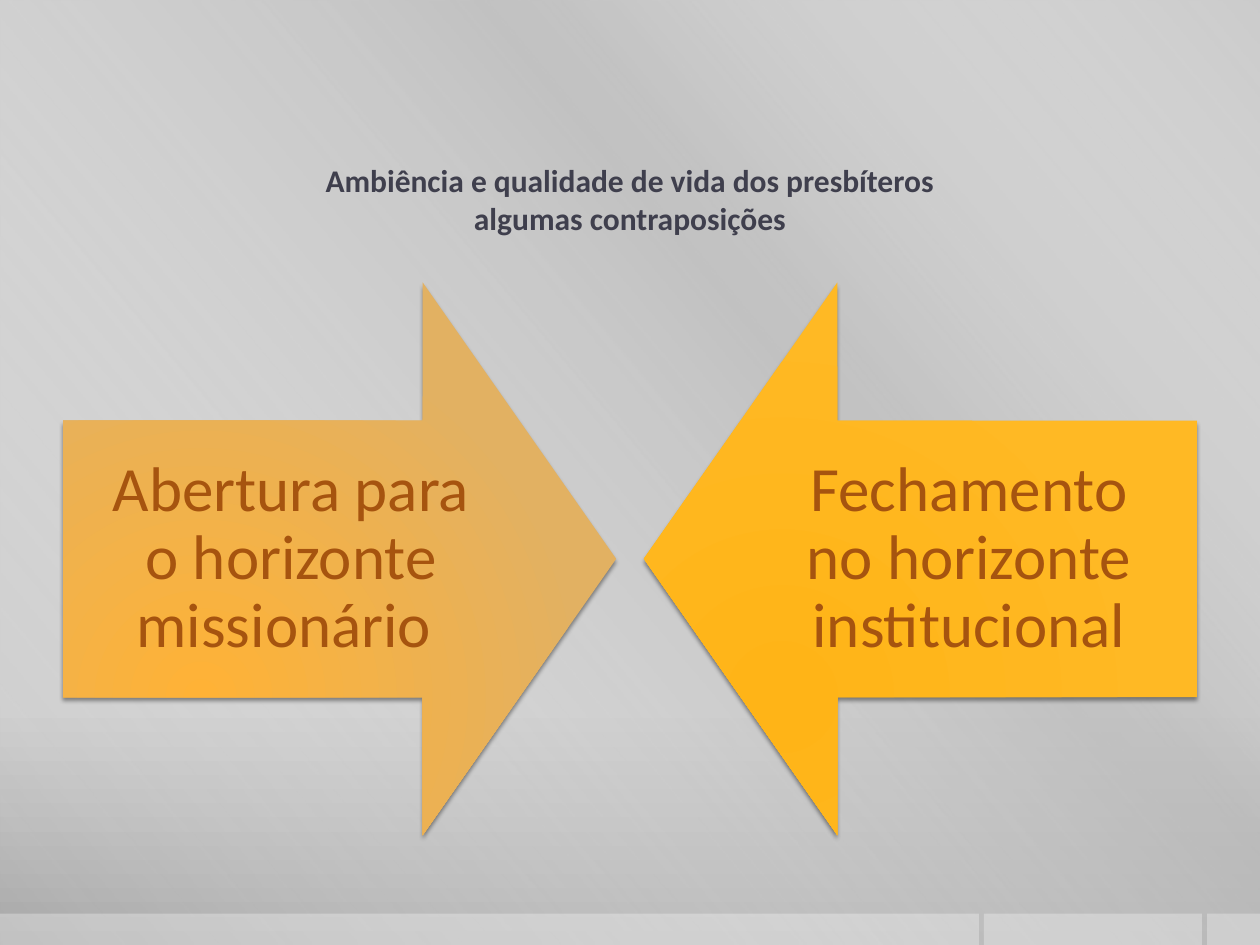
import pptx
import pptx.util
import pptx.oxml
import pptx.oxml.ns
import pptx.dml.color
import pptx.enum.shapes
import pptx.enum.text

Inches, Pt = pptx.util.Inches, pptx.util.Pt
SHAPE = pptx.enum.shapes.MSO_SHAPE
CENTER = pptx.enum.text.PP_ALIGN.CENTER
MIDDLE = pptx.enum.text.MSO_ANCHOR.MIDDLE
NS = pptx.oxml.ns.nsdecls("a")


def shade(node, stops, way):
    """Swap a solid fill for a gradient of (place, colour, opacity) stops."""
    marks = "".join(
        f'<a:gs pos="{place * 1000}"><a:srgbClr val="{hue}">'
        f'<a:alpha val="{alpha * 1000}"/></a:srgbClr></a:gs>'
        for place, hue, alpha in stops)
    old = node.find(pptx.oxml.ns.qn("a:solidFill"))
    node.replace(old, pptx.oxml.parse_xml(
        f'<a:gradFill {NS} rotWithShape="1"><a:gsLst>{marks}</a:gsLst>{way}</a:gradFill>'))


def style(frame, text, size, hue, bold=False):
    """Fill a frame with one centred paragraph."""
    frame.word_wrap = True
    frame.vertical_anchor = MIDDLE
    para = frame.paragraphs[0]
    para.text = text
    para.alignment = CENTER
    para.font.name, para.font.size, para.font.bold = "Calibri", Pt(size), bold
    para.font.color.rgb = pptx.dml.color.RGBColor.from_string(hue)
    return para


deck = pptx.Presentation()
deck.slide_width, deck.slide_height = Inches(10), Inches(7.5)
wide, high = deck.slide_width, deck.slide_height
slide = deck.slides.add_slide(deck.slide_layouts[5])
shapes = slide.shapes
white = pptx.dml.color.RGBColor.from_string("FFFFFF")

# Background
slide.background.fill.solid()
slide.background.fill.fore_color.rgb = white
back = slide._element.find(".//" + pptx.oxml.ns.qn("p:bgPr"))
shade(back, [(0, "CBCBCB", 100), (76, "C8C8C8", 100), (100, "A7A7A7", 100)],
      '<a:lin ang="5400000" scaled="0"/>')

# Diagonal sheen and the strip along the foot
sheen = [(0, "FFFFFF", 0), (34, "BFBFBF", 61), (38, "BFBFBF", 76), (100, "FFFFFF", 0)]
clear = [(0, "FFFFFF", 30), (100, "FFFFFF", 30)]
foot = Inches(7.25)
panels = [(0, 0, 10, sheen, 140), (9.58, foot, 0.42, clear, 0),
          (7.81, foot, 1.73, clear, 0), (0, foot, 7.77, clear, 0)]
for left, top, span, stops, angle in panels:
    panel = shapes.add_shape(SHAPE.RECTANGLE, Inches(left), top, Inches(span), high - top)
    panel.shadow.inherit = False
    panel.line.fill.background()
    panel.fill.solid()
    panel.fill.fore_color.rgb = white
    shade(panel._element.spPr, stops, f'<a:lin ang="{angle * 60000}" scaled="0"/>')

# Title, brought in front of the panels
title = shapes.title
title.left, title.top, title.width, title.height = (
    int(wide * 0.05), Inches(1.08), int(wide * 0.9), Inches(1))
title.text_frame.margin_left = title.text_frame.margin_right = 0
style(title.text_frame, "Ambiência e qualidade de vida dos presbíteros\valgumas contraposições",
      18, "3F3F4D", True)
shapes._spTree.append(title._element)

# Opposed arrows, each with its label over the shaft
side, top = Inches(4.39), Inches(2.24)
broad, tall = Inches(3.62), side // 2
edge = int(wide * 0.05)
arrows = [
    (edge, edge, 270, "FFB236", "E2B162", "Abertura para o horizonte missionário "),
    (wide - edge - side, wide - edge - broad, 90, "FFB417", "FFB924",
     "Fechamento no horizonte institucional")]
for left, start, turn, inner, outer, text in arrows:
    arrow = shapes.add_shape(SHAPE.DOWN_ARROW, left, top, side, side)
    arrow.rotation = turn
    arrow.adjustments[0], arrow.adjustments[1] = 0.5, 0.35
    arrow.line.fill.background()
    arrow.fill.solid()
    arrow.fill.fore_color.rgb = white
    shade(arrow._element.spPr, [(0, inner, 100), (100, outer, 100)],
          '<a:path path="circle"><a:fillToRect l="50000" t="100000" r="100000" b="50000"/></a:path>')
    arrow._element.spPr.append(pptx.oxml.parse_xml(
        f'<a:effectLst {NS}><a:outerShdw blurRad="25400" dist="25400" dir="5400000" '
        'rotWithShape="0"><a:srgbClr val="000000"><a:alpha val="40000"/></a:srgbClr>'
        '</a:outerShdw></a:effectLst>'))
    frame = shapes.add_textbox(start, top + side // 4, broad, tall).text_frame
    frame.margin_left = frame.margin_right = Inches(0.28)
    frame.margin_top = frame.margin_bottom = Inches(0.28)
    style(frame, text, 36, "A6540F").line_spacing = 0.9

deck.save("out.pptx")
